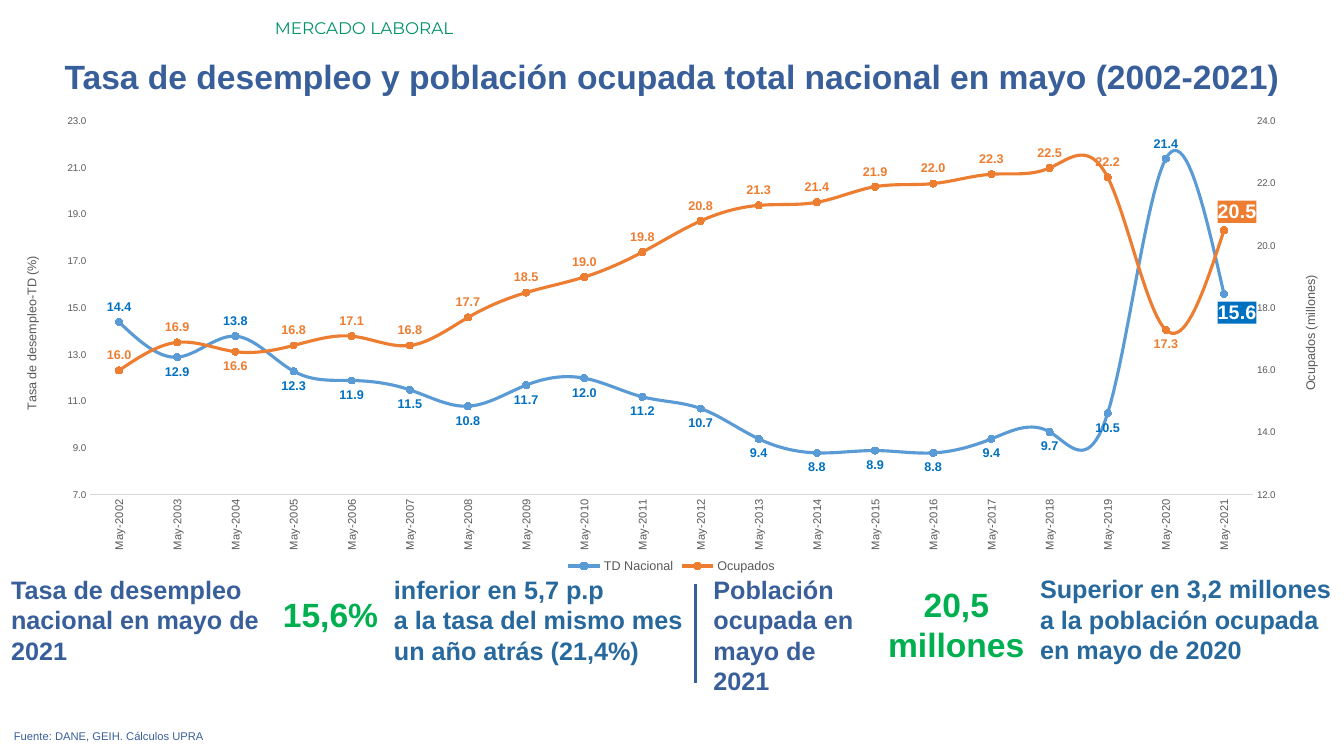
from copy import deepcopy

from lxml.etree import SubElement
from pptx import Presentation
from pptx.chart.axis import ValueAxis
from pptx.chart.data import CategoryChartData
from pptx.dml.color import RGBColor
from pptx.enum.chart import XL_CHART_TYPE as CT, XL_LABEL_POSITION as LP, XL_LEGEND_POSITION as LEG
from pptx.enum.chart import XL_MARKER_STYLE as MS, XL_TICK_MARK as TM
from pptx.enum.shapes import MSO_CONNECTOR
from pptx.enum.text import MSO_ANCHOR, MSO_AUTO_SIZE, PP_ALIGN as AL
from pptx.oxml import parse_xml
from pptx.oxml.ns import nsdecls, qn
from pptx.util import Cm, Pt

COLORS = {"section": "009267", "navy": "395F9B", "teal": "27689D", "figure": "00B050",
          "gray": "595959", "axis": "D9D9D9", "rate": "5B9BD5", "rate_label": "0070C0",
          "employed": "ED7D31", "white": "FFFFFF"}

TITLE = "Tasa de desempleo y población ocupada total nacional en mayo (2002-2021)"
TEXTS = [
    (["MERCADO LABORAL"], (6.68, 0.33, 27.18, 0.76), 12, "section", False, AL.LEFT, "Montserrat"),
    (["Tasa de desempleo nacional en mayo de 2021"],
     (0.03, 14.35, 7.21, 2.57), 18, "navy", True, AL.LEFT, "Arial"),
    (["15,6%"], (6.68, 14.83, 3.1, 1.27), 24, "figure", True, AL.RIGHT, "Arial"),
    (["inferior en 5,7 p.p", "a la tasa del mismo mes un año atrás (21,4%)"],
     (9.68, 14.35, 7.9, 2.57), 18, "teal", True, AL.LEFT, "Arial"),
    (["Población ocupada en mayo de 2021"],
     (17.73, 14.35, 4.65, 3.33), 18, "navy", True, AL.LEFT, "Arial"),
    (["20,5 millones"], (22.07, 14.58, 4.06, 2.31), 24, "figure", True, AL.CENTER, "Arial"),
    (["Superior en 3,2 millones a la población ocupada en mayo de 2020"],
     (25.96, 14.33, 8.18, 2.57), 18, "teal", True, AL.LEFT, "Arial"),
    (["Fuente: DANE, GEIH. Cálculos UPRA"],
     (0.1, 18.26, 32.79, 0.61), 8, "navy", False, AL.JUSTIFY, "Arial"),
]

YEARS = range(2002, 2022)
SERIES = [
    {"name": "TD Nacional", "color": "rate", "label": "rate_label", "pos": LP.BELOW,
     "points": {0: LP.ABOVE, 2: LP.ABOVE, 18: LP.ABOVE, 19: LP.BELOW},
     "values": [14.4, 12.9, 13.8, 12.3, 11.9, 11.5, 10.8, 11.7, 12, 11.2,
                10.7, 9.4, 8.8, 8.9, 8.8, 9.4, 9.7, 10.5, 21.4, 15.6]},
    {"name": "Ocupados", "color": "employed", "label": "employed", "pos": LP.ABOVE,
     "points": {2: LP.BELOW, 18: LP.BELOW, 19: LP.ABOVE},
     "values": [16, 16.9, 16.6, 16.8, 17.1, 16.8, 17.7, 18.5, 19, 19.8,
                20.8, 21.3, 21.4, 21.9, 22, 22.3, 22.5, 22.2, 17.3, 20.5]},
]
LAST = len(YEARS) - 1
PLOT_AREA = {"x": 0.053, "y": 0.031, "w": 0.894, "h": 0.794}


def rgb(name):
    return RGBColor.from_string(COLORS[name])


def set_font(font, size, color, bold=False, face="Arial"):
    font.size, font.bold, font.name = Pt(size), bold, face
    font.color.rgb = rgb(color)


def add_text(slide, lines, box, size, color, bold, align, face):
    tf = slide.shapes.add_textbox(*map(Cm, box)).text_frame
    tf.word_wrap = True
    tf.text = "\n".join(lines)
    for p in tf.paragraphs:
        p.alignment = align
        set_font(p.font, size, color, bold, face)


def format_series(s, spec):
    s.smooth = True
    s.format.line.width = Pt(2.25)
    s.format.line.color.rgb = rgb(spec["color"])
    s.marker.style, s.marker.size = MS.CIRCLE, 5
    s.marker.format.fill.solid()
    s.marker.format.fill.fore_color.rgb = rgb(spec["color"])
    s.marker.format.line.color.rgb = rgb(spec["color"])
    labels = s.data_labels
    labels.show_value, labels.position = True, spec["pos"]
    labels.number_format, labels.number_format_is_linked = "#,##0.0", False
    set_font(labels.font, 9, spec["label"], True)
    for i, pos in spec["points"].items():
        label = s.points[i].data_label
        is_last = i == LAST
        set_font(label.font, 14 if is_last else 9, "white" if is_last else spec["label"], True)
        label.position = pos
    highlight(labels, COLORS[spec["label"]])


def highlight(labels, color):
    d = labels._element.xpath(f'c:dLbl[c:idx/@val="{LAST}"]')[0]
    d.find(qn("c:idx")).addnext(parse_xml(
        f'<c:layout {nsdecls("c")}><c:manualLayout><c:x val="0.01"/><c:y val="0"/>'
        '</c:manualLayout></c:layout>'))
    d.find(qn("c:txPr")).addprevious(parse_xml(
        f'<c:spPr {nsdecls("c", "a")}><a:solidFill><a:srgbClr val="{color}"/>'
        '</a:solidFill></c:spPr>'))


def format_value_axis(axis, title, low, high):
    axis.minimum_scale, axis.maximum_scale, axis.major_unit = low, high, 2
    axis.has_major_gridlines = False
    axis.major_tick_mark = axis.minor_tick_mark = TM.NONE
    axis.format.line.fill.background()
    axis.tick_labels.number_format = "0.0"
    axis.tick_labels.number_format_is_linked = False
    set_font(axis.tick_labels.font, 7, "gray")
    tf = axis.axis_title.text_frame
    tf.text = title
    set_font(tf.paragraphs[0].font, 9, "gray")


def add_right_axis(chart):
    area = chart._chartSpace.chart.plotArea
    left_plot = area.find(qn("c:lineChart"))
    right_plot = deepcopy(left_plot)
    left_plot.remove(left_plot.findall(qn("c:ser"))[1])
    right_plot.remove(right_plot.findall(qn("c:ser"))[0])
    left_plot.addnext(right_plot)
    cat, val = deepcopy(area.find(qn("c:catAx"))), deepcopy(area.find(qn("c:valAx")))
    for ax, own, other in ((cat, "5001", "5002"), (val, "5002", "5001")):
        ax.find(qn("c:axId")).set("val", own)
        ax.find(qn("c:crossAx")).set("val", other)
    for ref, ax_id in zip(right_plot.findall(qn("c:axId")), ("5001", "5002")):
        ref.set("val", ax_id)
    cat.find(qn("c:delete")).set("val", "1")
    val.find(qn("c:axPos")).set("val", "r")
    val.find(qn("c:crosses")).set("val", "max")
    area.find(qn("c:valAx")).addnext(val)
    val.addnext(cat)
    return ValueAxis(val)


def set_plot_area(chart):
    area = chart._chartSpace.chart.plotArea
    for old in area.findall(qn("c:layout")):
        area.remove(old)
    layout = parse_xml(f'<c:layout {nsdecls("c")}><c:manualLayout/></c:layout>')
    settings = {"layoutTarget": "inner", "xMode": "edge", "yMode": "edge", **PLOT_AREA}
    for tag, value in settings.items():
        SubElement(layout[0], qn(f"c:{tag}")).set("val", str(value))
    area.insert(0, layout)


def add_line_chart(slide):
    data = CategoryChartData(number_format="0.0")
    data.categories = [f"May-{year}" for year in YEARS]
    for spec in SERIES:
        data.add_series(spec["name"], spec["values"])
    box = map(Cm, (0.53, 2.69, 32.79, 11.86))
    chart = slide.shapes.add_chart(CT.LINE_MARKERS, *box, data).chart
    chart.has_title = False
    set_font(chart.font, 10, "gray")
    chart.has_legend = True
    chart.legend.position, chart.legend.include_in_layout = LEG.BOTTOM, False
    set_font(chart.legend.font, 9, "gray")
    plot = chart.plots[0]
    plot.vary_by_categories = False
    for s, spec in zip(plot.series, SERIES):
        format_series(s, spec)
    cat = chart.category_axis
    cat.major_tick_mark = TM.NONE
    cat.format.line.width = Pt(0.75)
    cat.format.line.color.rgb = rgb("axis")
    set_font(cat.tick_labels.font, 8, "gray")
    body = cat._element.find(qn("c:txPr")).find(qn("a:bodyPr"))
    body.set("rot", "-5400000")
    body.set("vert", "horz")
    format_value_axis(chart.value_axis, "Tasa de desempleo-TD (%)", 7, 23)
    format_value_axis(add_right_axis(chart), "Ocupados (millones)", 12, 24)
    set_plot_area(chart)


def main():
    prs = Presentation()
    prs.slide_width, prs.slide_height = Cm(33.87), Cm(19.05)
    slide = prs.slides.add_slide(prs.slide_layouts[5])
    title = slide.shapes.title
    title.left, title.top, title.width, title.height = map(Cm, (0, 1.27, 33.87, 1.27))
    tf = title.text_frame
    tf.text = TITLE
    tf.auto_size, tf.vertical_anchor = MSO_AUTO_SIZE.NONE, MSO_ANCHOR.MIDDLE
    tf.paragraphs[0].alignment = AL.CENTER
    set_font(tf.paragraphs[0].font, 24, "navy", True)
    add_line_chart(slide)
    for text in TEXTS:
        add_text(slide, *text)
    divider = slide.shapes.add_connector(
        MSO_CONNECTOR.STRAIGHT, Cm(17.53), Cm(14.71), Cm(17.53), Cm(17.22))
    divider.line.width = Pt(2.25)
    divider.line.color.rgb = rgb("navy")
    SubElement(divider._element.spPr, qn("a:effectLst"))
    prs.save("out.pptx")


if __name__ == "__main__":
    main()
